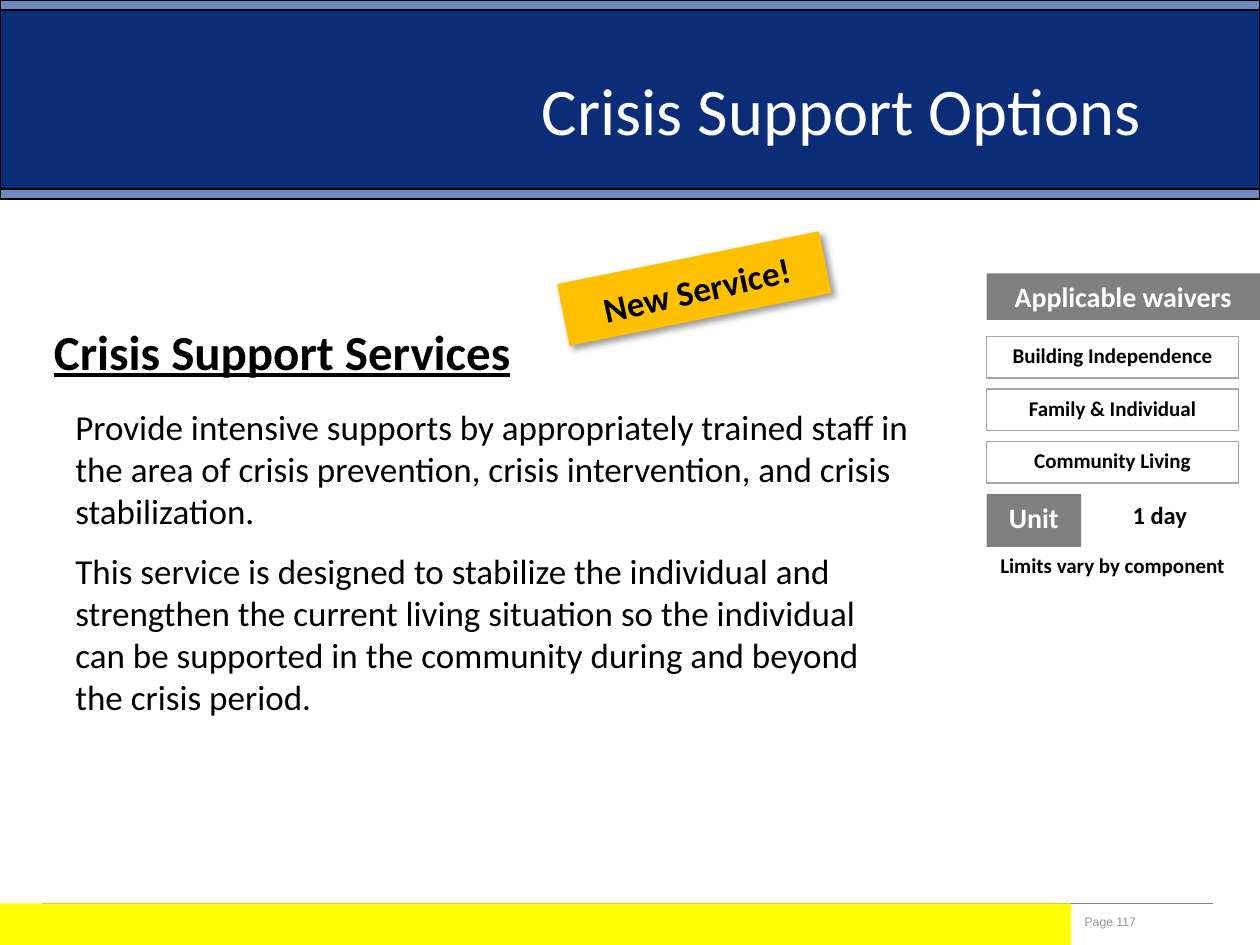
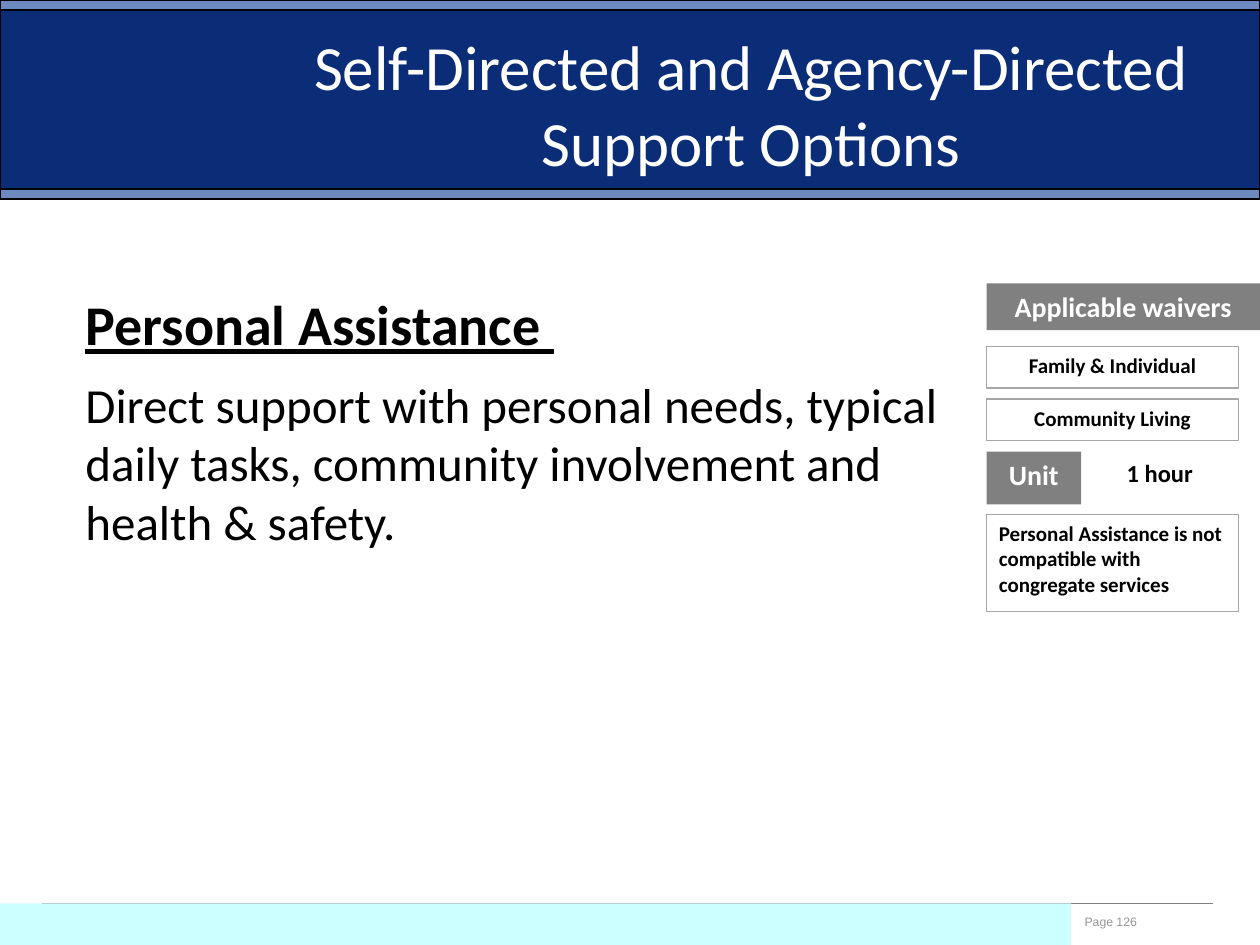
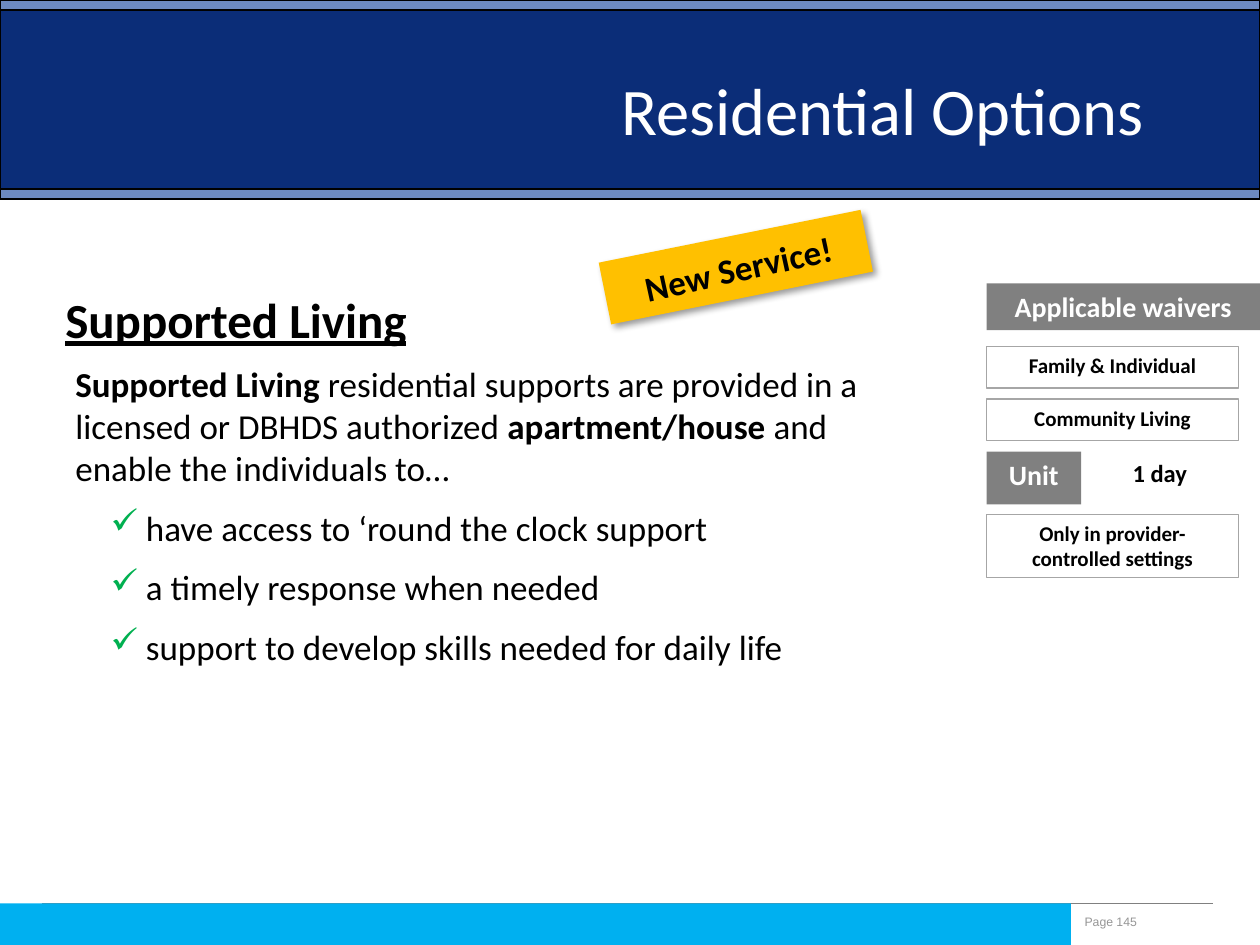
import pptx
import pptx.util
import pptx.dml.color
import pptx.enum.shapes
import pptx.enum.text
import pptx.oxml
import pptx.oxml.ns
from lxml import etree

Inches = pptx.util.Inches
Pt = pptx.util.Pt
ALIGN = pptx.enum.text.PP_ALIGN
ANCHOR = pptx.enum.text.MSO_ANCHOR

COLORS = {
    "navy": "0B2D78",
    "steel": "6D8AC0",
    "black": "000000",
    "white": "FFFFFF",
    "gray": "808080",
    "border": "A6A6A6",
    "page": "969696",
    "amber": "FFC000",
    "check": "00B050",
    "yellow": "FFFF00",
    "aqua": "CCFFFF",
    "sky": "00B0F0",
}
PANEL_LEFT = 7.83
PANEL_STEP = 5 / 12


def rgb(name):
    return pptx.dml.color.RGBColor.from_string(COLORS[name])


def add_xml(parent, tag, **attributes):
    element = etree.SubElement(parent, pptx.oxml.ns.qn(tag))
    for name, value in attributes.items():
        element.set(name, str(value))
    return element


def add_rect(slide, box, fill, line=None):
    sp = slide.shapes.add_shape(
        pptx.enum.shapes.MSO_SHAPE.RECTANGLE, *map(Inches, box))
    sp.shadow.inherit = False
    sp.fill.solid()
    sp.fill.fore_color.rgb = rgb(fill)
    if line:
        sp.line.color.rgb = rgb(line)
        sp.line.width = Pt(0.75)
    else:
        sp.line.fill.background()
    return sp


def add_check_bullet(p):
    """Hang a green check mark to the left of the paragraph."""
    pPr = p._p.get_or_add_pPr()
    pPr.set("marL", str(Inches(0.56)))
    pPr.set("indent", str(-Inches(0.28)))
    color = add_xml(pPr, "a:buClr")
    add_xml(color, "a:srgbClr", val=COLORS["check"])
    add_xml(pPr, "a:buChar", char="✓")


def add_text(slide, box, *paragraphs, fill=None, line=None, size=12, bold=False,
             underline=False, color="black", font="Calibri", align=ALIGN.LEFT,
             anchor=ANCHOR.TOP, gap=0, checks_from=None, rotation=0):
    """Write paragraphs; each is a string or a list of (text, bold) pairs.

    Paragraphs from index checks_from onward get check mark bullets.
    """
    if fill:
        sp = add_rect(slide, box, fill, line)
    else:
        sp = slide.shapes.add_textbox(*map(Inches, box))
    sp.rotation = rotation
    tf = sp.text_frame
    tf.word_wrap = True
    tf.vertical_anchor = anchor
    for i, runs in enumerate(paragraphs):
        p = tf.add_paragraph() if i else tf.paragraphs[0]
        p.alignment = align
        if i and gap:
            p.space_before = Pt(gap)
        if checks_from is not None and i >= checks_from:
            add_check_bullet(p)
        for text, strong in [(runs, bold)] if isinstance(runs, str) else runs:
            r = p.add_run()
            r.text = text
            r.font.name = font
            r.font.size = Pt(size)
            r.font.bold = strong
            r.font.underline = underline
            r.font.color.rgb = rgb(color)


def add_rule(slide, left, right, top):
    rule = slide.shapes.add_connector(
        pptx.enum.shapes.MSO_CONNECTOR.STRAIGHT,
        Inches(left), Inches(top), Inches(right), Inches(top))
    rule.line.color.rgb = rgb("gray")
    rule.line.width = Pt(1)
    add_xml(rule._element.spPr, "a:effectLst")


def add_header(slide, title, title_box, title_size):
    add_rect(slide, (0, 0.08, 10, 1.48), "navy", "black")
    for top in (1.5, 0):
        add_rect(slide, (0, top, 10, 0.08), "steel", "black")
    add_text(slide, title_box, title, size=title_size, color="white",
             align=ALIGN.CENTER)


def add_footer(slide, page, band):
    add_rule(slide, 0.33, 9.63, 7.17)
    add_rect(slide, (0, 7.17, 8.5, 0.33), band)
    add_text(slide, (8.51, 7.2, 1.41, 0.22), f"Page {page}", size=7,
             color="page", font="Arial", anchor=ANCHOR.MIDDLE)


def add_heading(slide, box, text, size=28):
    add_text(slide, box, text, size=size, bold=True, underline=True)


def add_waiver_panel(slide, top, waivers, unit):
    """Stack the waiver boxes and the unit row; return the top of the unit row."""
    label = {"bold": True, "align": ALIGN.CENTER}
    dark = {"fill": "gray", "color": "white", "size": 16, **label}
    add_text(slide, (PANEL_LEFT, top, 2.17, 0.37), "Applicable waivers", **dark)
    y = top + 0.5
    for waiver in waivers:
        add_text(slide, (PANEL_LEFT, y, 2, 0.33), waiver,
                 fill="white", line="border", **label)
        y += PANEL_STEP
    add_text(slide, (PANEL_LEFT, y, 0.75, 0.42), "Unit", **dark)
    add_text(slide, (PANEL_LEFT + 0.75, y, 1.25, 0.42), unit, size=14, **label)
    return y


def add_note(slide, top, height, text, align=ALIGN.CENTER, **box_format):
    add_text(slide, (PANEL_LEFT, top, 2, height), text, bold=True, align=align,
             **box_format)


def add_new_service_badge(slide, left, top):
    badge = add_rect(slide, (left, top, 2.12, 0.5), "amber")
    badge.rotation = 348.6
    effects = badge._element.spPr.find(pptx.oxml.ns.qn("a:effectLst"))
    shadow = add_xml(effects, "a:outerShdw", blurRad=Pt(4), dist=Pt(3),
                     dir=45 * 60000, algn="tl", rotWithShape=0)
    tint = add_xml(shadow, "a:srgbClr", val=COLORS["black"])
    add_xml(tint, "a:alpha", val=40000)
    add_text(slide, (left - 0.1, top + 0.04, 2.36, 0.44), "New Service!",
             size=20, bold=True, align=ALIGN.CENTER, rotation=347.6)


def build_crisis_support(slide):
    add_header(slide, "Crisis Support Options", (4.08, 0.5, 5.2, 0.74), 38)
    add_heading(slide, (0.33, 2.5, 7.15, 0.57), "Crisis Support Services")
    add_text(slide, (0.5, 3.17, 6.83, 2.63),
             "Provide intensive supports by appropriately trained staff in the "
             "area of crisis prevention, crisis intervention, and crisis "
             "stabilization.",
             "This service is designed to stabilize the individual and "
             "strengthen the current living situation so the individual can be "
             "supported in the community during and beyond the crisis period.",
             size=20, gap=10)
    unit_top = add_waiver_panel(
        slide, 2.17,
        ["Building Independence", "Family & Individual", "Community Living"],
        "1 day")
    add_note(slide, unit_top + PANEL_STEP, 0.33, "Limits vary by component")
    add_footer(slide, 117, "yellow")
    add_new_service_badge(slide, 4.45, 2.04)


def build_personal_assistance(slide):
    add_header(slide, "Self-Directed and Agency-Directed Support Options",
               (2.17, 0.17, 7.58, 1.31), 36)
    add_heading(slide, (0.58, 2.25, 4.67, 0.64), "Personal Assistance ", 32)
    add_text(slide, (0.58, 2.92, 7.25, 1.51),
             "Direct support with personal needs, typical daily tasks, "
             "community involvement and health & safety.", size=28)
    unit_top = add_waiver_panel(
        slide, 2.25, ["Family & Individual", "Community Living"], "1 hour")
    add_note(slide, unit_top + 0.5, 0.77,
             "Personal Assistance is not compatible with congregate services",
             align=ALIGN.LEFT, fill="white", line="border")
    add_footer(slide, 126, "aqua")


def build_supported_living(slide):
    add_header(slide, "Residential Options", (4.51, 0.5, 4.99, 0.74), 38)
    add_heading(slide, (0.42, 2.25, 4.32, 0.57), "Supported Living")
    add_text(slide, (0.5, 2.83, 6.67, 2.63),
             [("Supported Living ", True),
              ("residential supports are provided in a licensed or DBHDS "
               "authorized ", False),
              ("apartment/house ", True),
              ("and enable the individuals to…", False)],
             "have access to ‘round the clock support",
             "a timely response when needed",
             "support to develop skills needed for daily life",
             size=20, gap=10, checks_from=1)
    unit_top = add_waiver_panel(
        slide, 2.25, ["Family & Individual", "Community Living"], "1 day")
    add_note(slide, unit_top + 0.5, 0.5, "Only in provider-controlled settings",
             fill="white", line="border")
    add_footer(slide, 145, "sky")
    add_new_service_badge(slide, 4.78, 1.87)


def main():
    prs = pptx.Presentation()
    prs.slide_width = Inches(10)
    prs.slide_height = Inches(7.5)
    for build in (build_crisis_support, build_personal_assistance,
                  build_supported_living):
        build(prs.slides.add_slide(prs.slide_layouts[6]))
    prs.save("out.pptx")


if __name__ == "__main__":
    main()
